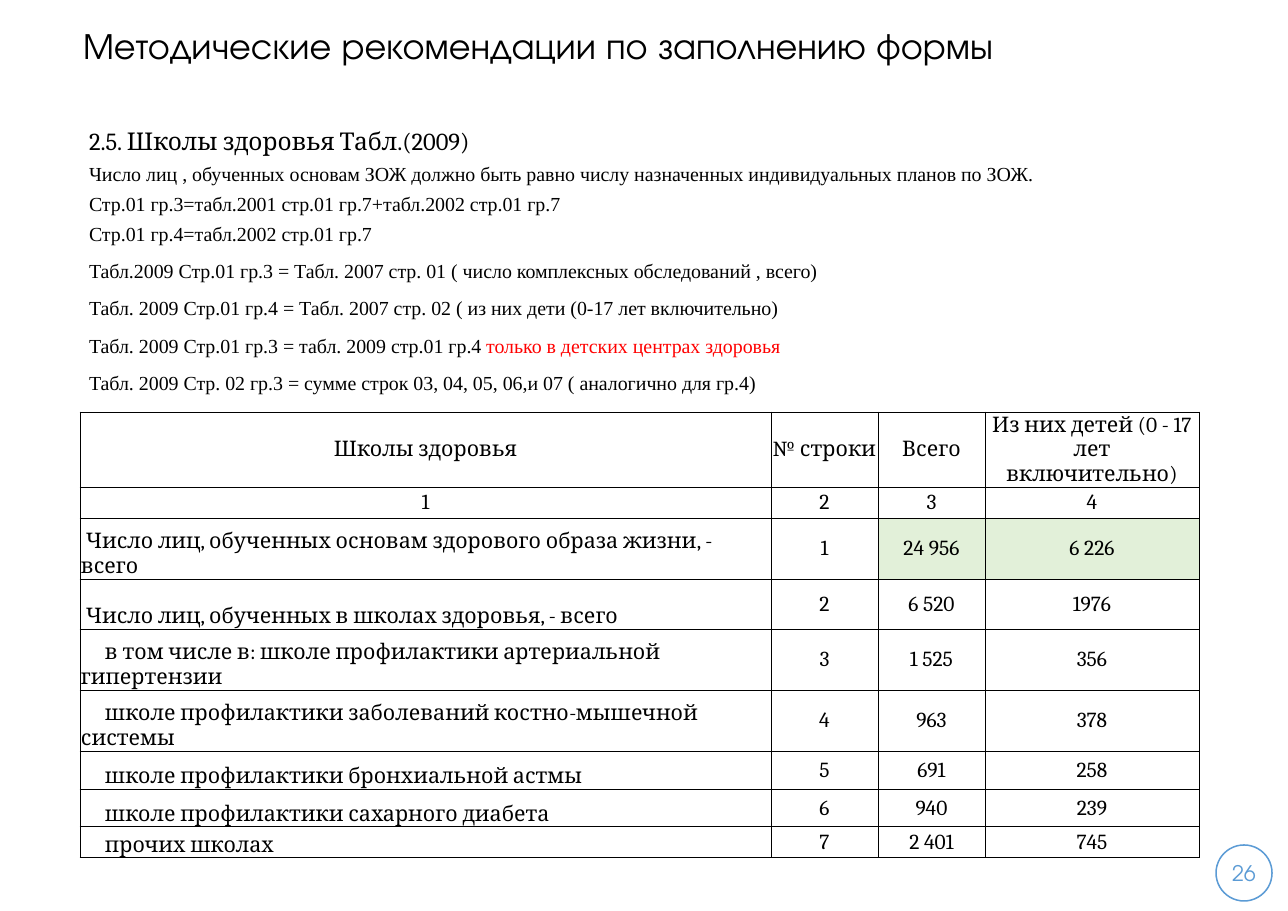
import dataclasses
from typing import Optional

import lxml.etree
import pptx
import pptx.dml.color
import pptx.enum.shapes
import pptx.enum.text
import pptx.oxml.ns
import pptx.util

EMU_PER_PX = 8298
COLORS = {"text": "000000", "accent": "5B9BD5", "warning": "FF0000", "total": "E2F0D9"}
DISPLAY, SERIF, BODY = "TeX Gyre Adventor", "Cambria", "Times New Roman"
ALIGN = pptx.enum.text.PP_ALIGN
ANCHOR = pptx.enum.text.MSO_ANCHOR
AUTO_SIZE = pptx.enum.text.MSO_AUTO_SIZE
qn = pptx.oxml.ns.qn


@dataclasses.dataclass
class Rule:
    text: str
    warning: str = ""
    font: str = BODY
    size: int = 13
    spacing: Optional[float] = None
    align: pptx.enum.text.PP_ALIGN = ALIGN.JUSTIFY


@dataclasses.dataclass
class SchoolRow:
    values: tuple[str, str, str, str]
    height: int
    indent: Optional[int] = None
    highlighted: bool = False


RULES = [
    Rule("2.5. Школы здоровья Табл.(2009)", font=SERIF, size=16, spacing=0.7, align=ALIGN.LEFT),
    Rule("Число лиц , обученных основам ЗОЖ должно быть равно числу назначенных "
         "индивидуальных планов по ЗОЖ.", spacing=0.7, align=ALIGN.LEFT),
    Rule("Стр.01 гр.3=табл.2001 стр.01 гр.7+табл.2002 стр.01 гр.7", spacing=0.7, align=ALIGN.LEFT),
    Rule("Стр.01 гр.4=табл.2002 стр.01 гр.7", spacing=0.7, align=ALIGN.LEFT),
    Rule("Табл.2009 Стр.01 гр.3 = Табл. 2007 стр. 01 ( число комплексных обследований , всего)"),
    Rule("Табл. 2009 Стр.01 гр.4 = Табл. 2007 стр. 02 ( из них дети (0-17 лет включительно)"),
    Rule("Табл. 2009 Стр.01 гр.3 = табл. 2009 стр.01 гр.4 ", "только в детских центрах здоровья"),
    Rule("Табл. 2009 Стр. 02 гр.3 = сумме строк 03, 04, 05, 06,и 07 ( аналогично для гр.4)"),
]

# Header rows have no indent and are centred throughout.
SCHOOL_ROWS = [
    SchoolRow(("Школы здоровья", "№ строки", "Всего", "Из них детей (0 - 17 лет включительно)"), 61),
    SchoolRow(("1", "2", "3", "4"), 31),
    SchoolRow(("Число лиц, обученных основам здорового образа жизни, - всего",
               "1", "24 956", "6 226"), 61, 5, True),
    SchoolRow(("Число лиц, обученных в школах здоровья, - всего", "2", "6 520", "1976"), 50, 5),
    SchoolRow(("в том числе в: школе профилактики артериальной гипертензии",
               "3", "1 525", "356"), 61, 24),
    SchoolRow(("школе профилактики заболеваний костно-мышечной системы",
               "4", "963", "378"), 61, 24),
    SchoolRow(("школе профилактики бронхиальной астмы", "5", "691", "258"), 38, 24),
    SchoolRow(("школе профилактики сахарного диабета", "6", "940", "239"), 38, 24),
    SchoolRow(("прочих школах", "7", "2 401", "745"), 31, 24),
]
COLUMN_WIDTHS = (691, 107, 107, 214)


def px(length: int) -> pptx.util.Emu:
    return pptx.util.Emu(length * EMU_PER_PX)


def rgb(color: str) -> pptx.dml.color.RGBColor:
    return pptx.dml.color.RGBColor.from_string(COLORS[color])


def place(shape, left: int, top: int, width: int, height: int) -> None:
    shape.left, shape.top, shape.width, shape.height = map(px, (left, top, width, height))


def write(paragraph, text: str, *, font: str, size: int, color: str = "text",
          align=ALIGN.LEFT, spacing: Optional[float] = None, before: float = 0,
          indent: int = 0) -> None:
    """Append a run and format its paragraph, without a bullet."""
    properties = paragraph._p.get_or_add_pPr()
    properties.set("marL", "0")
    properties.set("indent", str(px(indent)))
    if properties.find(qn("a:buNone")) is None:
        lxml.etree.SubElement(properties, qn("a:buNone"))
    paragraph.alignment = align
    paragraph.space_before = pptx.util.Pt(before)
    paragraph.line_spacing = spacing
    run = paragraph.add_run()
    run.text = text
    run.font.name = font
    run.font.size = pptx.util.Pt(size)
    run.font.color.rgb = rgb(color)


def set_insets(target, inset: int, bottom: int) -> None:
    target.margin_left = target.margin_right = target.margin_top = px(inset)
    target.margin_bottom = px(bottom)


def add_borders(cell) -> None:
    properties = cell._tc.get_or_add_tcPr()
    for position, side in enumerate(("lnL", "lnR", "lnT", "lnB")):
        border = lxml.etree.Element(qn(f"a:{side}"), w=str(pptx.util.Pt(0.5)))
        fill = lxml.etree.SubElement(border, qn("a:solidFill"))
        lxml.etree.SubElement(fill, qn("a:srgbClr"), val=COLORS["text"])
        properties.insert(position, border)


def add_title(slide) -> None:
    title = slide.shapes.title
    place(title, 72, 22, 1049, 51)
    frame = title.text_frame
    frame.word_wrap = False
    frame.auto_size = AUTO_SIZE.SHAPE_TO_FIT_TEXT
    frame.vertical_anchor = ANCHOR.TOP
    write(frame.paragraphs[0], "Методические рекомендации по заполнению формы",
          font=DISPLAY, size=24, spacing=0.9)


def add_rules(slide) -> None:
    body = slide.placeholders[1]
    place(body, 72, 117, 1006, 695)
    frame = body.text_frame
    frame.auto_size = AUTO_SIZE.NONE
    set_insets(frame, 17, 17)
    for number, rule in enumerate(RULES):
        paragraph = frame.add_paragraph() if number else frame.paragraphs[0]
        layout = dict(font=rule.font, size=rule.size, align=rule.align,
                      spacing=rule.spacing, before=8.8 if number else 0)
        write(paragraph, rule.text, **layout)
        if rule.warning:
            write(paragraph, rule.warning, color="warning", **layout)


def add_school_table(slide) -> None:
    total_height = sum(row.height for row in SCHOOL_ROWS)
    table = slide.shapes.add_table(len(SCHOOL_ROWS), len(COLUMN_WIDTHS), px(80), px(412),
                                   px(sum(COLUMN_WIDTHS)), px(total_height)).table
    table.first_row = table.horz_banding = False
    for column, width in zip(table.columns, COLUMN_WIDTHS):
        column.width = px(width)
    for row_index, school in enumerate(SCHOOL_ROWS):
        table.rows[row_index].height = px(school.height)
        for column_index, value in enumerate(school.values):
            cell = table.cell(row_index, column_index)
            is_label = column_index == 0 and school.indent is not None
            set_insets(cell, 1, 0)
            cell.vertical_anchor = ANCHOR.BOTTOM if is_label else ANCHOR.MIDDLE
            if school.highlighted and column_index >= 2:
                cell.fill.solid()
                cell.fill.fore_color.rgb = rgb("total")
            else:
                cell.fill.background()
            add_borders(cell)
            write(cell.text_frame.paragraphs[0], value, font=SERIF, size=14,
                  align=ALIGN.LEFT if is_label else ALIGN.CENTER,
                  indent=school.indent if is_label else 0)


def add_page_number(slide) -> None:
    badge = slide.shapes.add_shape(pptx.enum.shapes.MSO_SHAPE.OVAL,
                                   px(1216), px(845), px(56), px(56))
    badge.shadow.inherit = False
    badge.fill.background()
    badge.line.color.rgb = rgb("accent")
    badge.line.width = pptx.util.Pt(1)
    set_insets(badge.text_frame, 0, 0)
    badge.text_frame.vertical_anchor = ANCHOR.MIDDLE
    write(badge.text_frame.paragraphs[0], "26", font=DISPLAY, size=14,
          color="accent", align=ALIGN.CENTER)


def main() -> None:
    presentation = pptx.Presentation()
    presentation.slide_width, presentation.slide_height = px(1288), px(911)
    slide = presentation.slides.add_slide(presentation.slide_layouts[1])
    add_page_number(slide)
    add_rules(slide)
    add_school_table(slide)
    add_title(slide)
    presentation.save("out.pptx")


if __name__ == "__main__":
    main()
